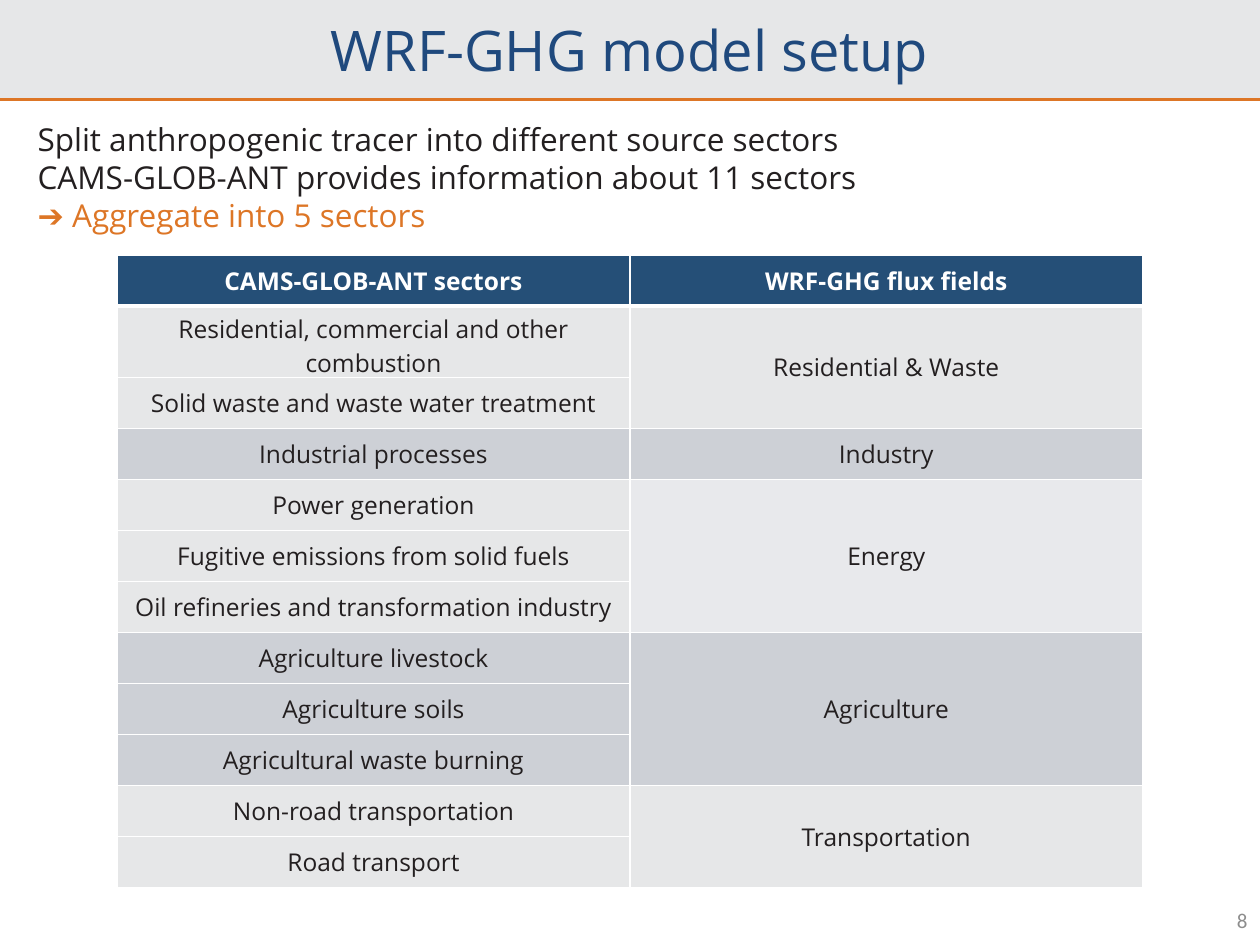
from dataclasses import dataclass

from lxml.etree import SubElement
from pptx import Presentation
from pptx.dml.color import RGBColor
from pptx.enum.shapes import MSO_CONNECTOR, MSO_SHAPE
from pptx.enum.text import MSO_ANCHOR, PP_ALIGN
from pptx.oxml import parse_xml
from pptx.oxml.ns import nsdecls, qn
from pptx.util import Inches, Pt

NAVY = RGBColor(0x1F, 0x49, 0x7D)
HEADER_BLUE = RGBColor(0x25, 0x4F, 0x77)
ORANGE = RGBColor(0xDD, 0x76, 0x26)
INK = RGBColor(0x23, 0x1F, 0x20)
LIGHT = RGBColor(0xE6, 0xE7, 0xE8)
PALE = RGBColor(0xE8, 0xE9, 0xEC)
MID = RGBColor(0xCD, 0xD0, 0xD6)
GREY = RGBColor(0x8D, 0x8D, 0x8D)
WHITE = RGBColor(0xFF, 0xFF, 0xFF)
BODY_FONT = "Open Sans"

HEADINGS = ("CAMS-GLOB-ANT sectors", "WRF-GHG flux fields")
FLUX_FIELDS = [
    ("Residential & Waste", LIGHT, LIGHT,
     ["Residential, commercial and other combustion",
      "Solid waste and waste water treatment"]),
    ("Industry", MID, MID, ["Industrial processes"]),
    ("Energy", LIGHT, PALE,
     ["Power generation",
      "Fugitive emissions from solid fuels",
      "Oil refineries and transformation industry"]),
    ("Agriculture", MID, MID,
     ["Agriculture livestock", "Agriculture soils", "Agricultural waste burning"]),
    ("Transportation", LIGHT, LIGHT, ["Non-road transportation", "Road transport"]),
]
INTRO = [
    ("Split anthropogenic tracer into different source sectors", INK),
    ("CAMS-GLOB-ANT provides information about 11 sectors", INK),
    ("➔ Aggregate into 5 sectors", ORANGE),
]


@dataclass
class Box:
    left: int
    top: int
    width: int
    height: int

    def share(self, left, top, width, height):
        return Box(self.left + int(self.width * left), self.top + int(self.height * top),
                   int(self.width * width), int(self.height * height))

    def frame(self):
        return self.left, self.top, self.width, self.height


def style(paragraph, size, color, font=BODY_FONT, align=PP_ALIGN.LEFT, bold=False):
    paragraph.alignment = align
    paragraph.font.size = Pt(size)
    paragraph.font.name = font
    paragraph.font.bold = bold
    paragraph.font.color.rgb = color


def title_band(slide, box):
    band = slide.shapes.add_shape(MSO_SHAPE.RECTANGLE, *box.frame())
    band.shadow.inherit = False
    band.fill.solid()
    band.fill.fore_color.rgb = LIGHT
    band.line.fill.background()
    band.text_frame.vertical_anchor = MSO_ANCHOR.MIDDLE
    title = band.text_frame.paragraphs[0]
    title.text = "WRF-GHG model setup"
    style(title, 32, NAVY, align=PP_ALIGN.CENTER)

    bottom = box.top + box.height
    rule = slide.shapes.add_connector(MSO_CONNECTOR.STRAIGHT, box.left, bottom,
                                      box.left + box.width, bottom)
    rule.line.color.rgb = ORANGE
    rule.line.width = Pt(1.5)
    SubElement(rule._element.spPr, qn("a:effectLst"))


def intro_text(slide, box):
    frame = slide.shapes.add_textbox(*box.frame()).text_frame
    frame.word_wrap = False
    for index, (sentence, color) in enumerate(INTRO):
        paragraph = frame.add_paragraph() if index else frame.paragraphs[0]
        paragraph.text = sentence
        style(paragraph, 18, color)


def fill_cell(cell, wording, fill, color=INK, bold=False, bottom_width=1):
    cell.text = wording
    cell.vertical_anchor = MSO_ANCHOR.MIDDLE
    style(cell.text_frame.paragraphs[0], 14, color, align=PP_ALIGN.CENTER, bold=bold)
    properties = cell._tc.get_or_add_tcPr()
    for edge, width in (("L", 1), ("R", 1), ("T", 1), ("B", bottom_width)):
        properties.append(parse_xml(
            f'<a:ln{edge} {nsdecls("a")} w="{Pt(width)}"><a:solidFill>'
            f'<a:srgbClr val="{WHITE}"/></a:solidFill></a:ln{edge}>'))
    cell.fill.solid()
    cell.fill.fore_color.rgb = fill


def sector_table(slide, box):
    row_count = 1 + sum(len(sectors) for *_, sectors in FLUX_FIELDS)
    table = slide.shapes.add_table(row_count, len(HEADINGS), *box.frame()).table
    for column, heading in enumerate(HEADINGS):
        fill_cell(table.cell(0, column), heading, HEADER_BLUE, WHITE, True, 3)
    first = 1
    for field, sector_fill, field_fill, sectors in FLUX_FIELDS:
        last = first + len(sectors) - 1
        for row, sector in enumerate(sectors, first):
            fill_cell(table.cell(row, 0), sector, sector_fill)
            fill_cell(table.cell(row, 1), field if row == first else "", field_fill)
        if last > first:
            table.cell(first, 1).merge(table.cell(last, 1))
        first = last + 1


def page_number(slide, box):
    frame = slide.shapes.add_textbox(*box.frame()).text_frame
    frame.word_wrap = True
    frame.vertical_anchor = MSO_ANCHOR.MIDDLE
    frame.paragraphs[0].text = "8"
    style(frame.paragraphs[0], 12, GREY, "Calibri", PP_ALIGN.RIGHT)


def main():
    deck = Presentation()
    deck.slide_width, deck.slide_height = Inches(10), Inches(7.5)
    slide = deck.slides.add_slide(deck.slide_layouts[6])
    page = Box(0, 0, deck.slide_width, deck.slide_height)
    title_band(slide, page.share(0, 0, 1, 0.105))
    intro_text(slide, page.share(0.02, 0.121, 0.676, 0.175))
    sector_table(slide, page.share(0.093, 0.27, 0.814, 0.648))
    page_number(slide, page.share(0.775, 0.947, 0.225, 0.053))
    deck.save("out.pptx")


if __name__ == "__main__":
    main()
